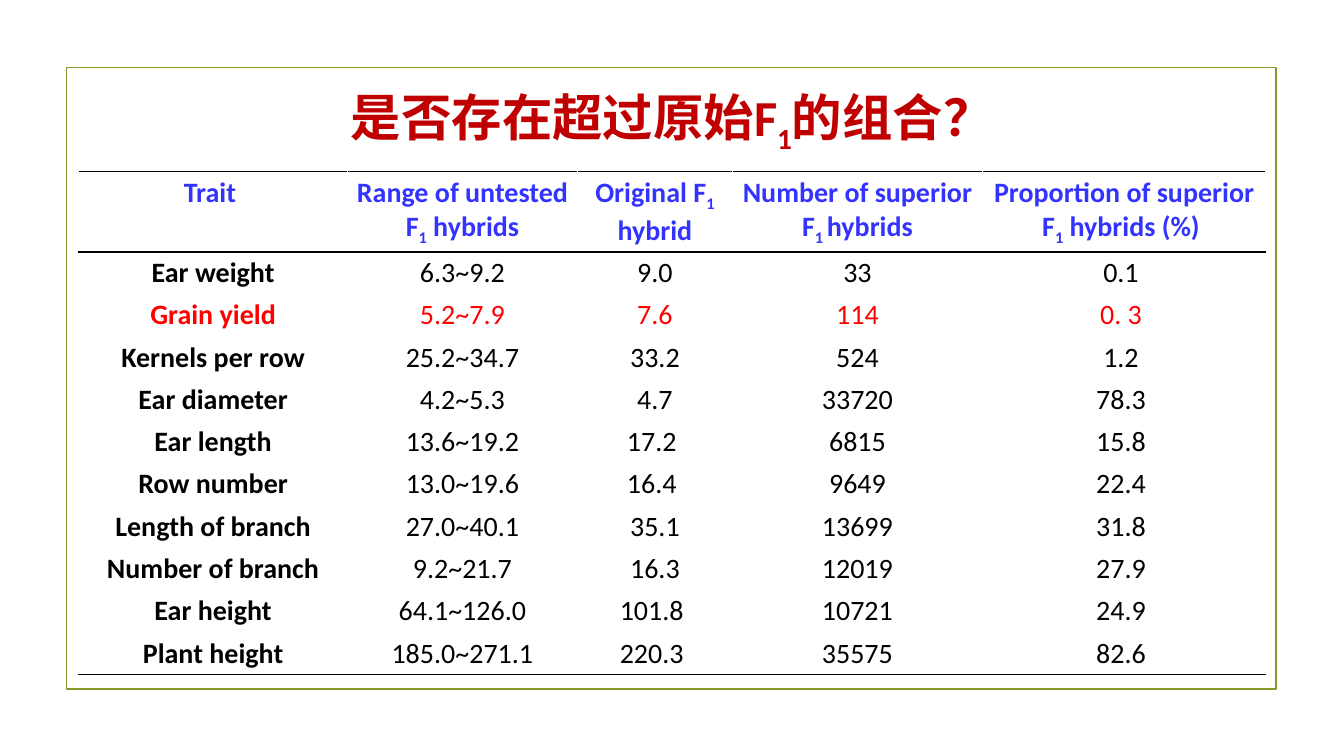
from lxml.etree import SubElement
from pptx import Presentation
from pptx.dml.color import RGBColor
from pptx.enum.shapes import MSO_SHAPE
from pptx.enum.text import MSO_ANCHOR, PP_ALIGN
from pptx.oxml.ns import qn
from pptx.util import Cm, Pt

OLIVE = RGBColor(0x83, 0x99, 0x2A)
DARK_RED = RGBColor(0xC0, 0x00, 0x00)
RED = RGBColor(0xFF, 0x00, 0x00)
BLUE = RGBColor(0x33, 0x33, 0xFF)
BLACK = RGBColor(0x00, 0x00, 0x00)
WHITE = RGBColor(0xFF, 0xFF, 0xFF)

FONT = "Calibri"
TITLE = "是否存在超过原始F|1|的组合？"
HEADERS = [
    "Trait ",
    "Range of untested F|1| hybrids",
    "Original F|1 |hybrid",
    "Number of superior F|1 |hybrids",
    "Proportion of superior F|1| hybrids (%) ",
]
TRAITS = [
    ["Ear weight", "6.3~9.2", "9.0", "33", "0.1 "],
    ["Grain yield", "5.2~7.9", "7.6", "114", "0. 3 "],
    ["Kernels per row", "25.2~34.7", "33.2", "524", "1.2 "],
    ["Ear diameter", "4.2~5.3", "4.7", "33720", "78.3 "],
    ["Ear length", "13.6~19.2", "17.2 ", "6815", "15.8 "],
    ["Row number", "13.0~19.6", "16.4 ", "9649", "22.4 "],
    ["Length of branch", "27.0~40.1", "35.1", "13699", "31.8 "],
    ["Number of branch", "9.2~21.7", "16.3", "12019", "27.9 "],
    ["Ear height", "64.1~126.0", "101.8 ", "10721", "24.9 "],
    ["Plant height", "185.0~271.1", "220.3 ", "35575", "82.6 "],
]
HIGHLIGHTED_TRAIT = "Grain yield"
COLUMN_WIDTHS = [6.78, 5.79, 3.91, 6.3, 7.14]
HEADER_HEIGHT = 2.03
ROW_HEIGHT = 1.06


def write_text(text_frame, text, size, color, bold):
    """Write centred text in which every second part between bars is a subscript."""
    paragraph = text_frame.paragraphs[0]
    paragraph.alignment = PP_ALIGN.CENTER
    for index, part in enumerate(text.split("|")):
        run = paragraph.add_run()
        run.text = part
        run.font.name = FONT
        run.font.size = Pt(size)
        run.font.bold = bold
        run.font.color.rgb = color
        if index % 2:
            run.font._element.set("baseline", "-25000")


def add_rule(cell, side):
    """Draw a thin black border on one side of a cell."""
    properties = cell._tc.get_or_add_tcPr()
    line = SubElement(properties, qn(f"a:{side}"), w=str(Pt(1)))
    fill = SubElement(line, qn("a:solidFill"))
    SubElement(fill, qn("a:srgbClr"), val=str(BLACK))


def add_frame(slide, left, top, width, height):
    """Add the olive outline around the content."""
    frame = slide.shapes.add_shape(
        MSO_SHAPE.RECTANGLE, Cm(left), Cm(top), Cm(width), Cm(height))
    frame.shadow.inherit = False
    frame.fill.background()
    frame.line.color.rgb = OLIVE
    frame.line.width = Pt(1.25)


def add_title(slide, left, top, width, height):
    """Place and fill the title placeholder."""
    title = slide.shapes.title
    title.left, title.top = Cm(left), Cm(top)
    title.width, title.height = Cm(width), Cm(height)
    title.text_frame.vertical_anchor = MSO_ANCHOR.MIDDLE
    write_text(title.text_frame, TITLE, 36, DARK_RED, True)


def add_trait_table(slide, left, top):
    """Add the trait table with rules around the header and below the last row."""
    rows = [HEADERS] + TRAITS
    height = HEADER_HEIGHT + ROW_HEIGHT * len(TRAITS)
    table = slide.shapes.add_table(
        len(rows), len(HEADERS), Cm(left), Cm(top),
        Cm(sum(COLUMN_WIDTHS)), Cm(height)).table
    table.first_row = False
    table.horz_banding = False
    for column, width in zip(table.columns, COLUMN_WIDTHS):
        column.width = Cm(width)
    for row_index, texts in enumerate(rows):
        is_header = row_index == 0
        table.rows[row_index].height = Cm(HEADER_HEIGHT if is_header else ROW_HEIGHT)
        color = BLACK
        if is_header:
            color = BLUE
        elif texts[0] == HIGHLIGHTED_TRAIT:
            color = RED
        for column_index, text in enumerate(texts):
            cell = table.cell(row_index, column_index)
            cell.margin_left = cell.margin_right = Cm(0.1)
            cell.margin_top = cell.margin_bottom = Cm(0.1)
            if row_index in (0, 1):
                add_rule(cell, "lnT")
            if row_index in (0, len(TRAITS)):
                add_rule(cell, "lnB")
            cell.fill.solid()
            cell.fill.fore_color.rgb = WHITE
            write_text(cell.text_frame, text, 20, color,
                       is_header or column_index == 0)


def add_hybrid_slide(presentation):
    """Add the slide comparing untested hybrids with the original one."""
    slide = presentation.slides.add_slide(presentation.slide_layouts[5])
    add_frame(slide, 1.68, 1.7, 30.48, 15.67)
    add_title(slide, 4.8, 1.93, 24.28, 2.21)
    add_trait_table(slide, 1.98, 4.32)


def main():
    """Build and save the presentation."""
    presentation = Presentation()
    presentation.slide_width = Cm(33.87)
    presentation.slide_height = Cm(19.05)
    add_hybrid_slide(presentation)
    presentation.save("out.pptx")


if __name__ == "__main__":
    main()
